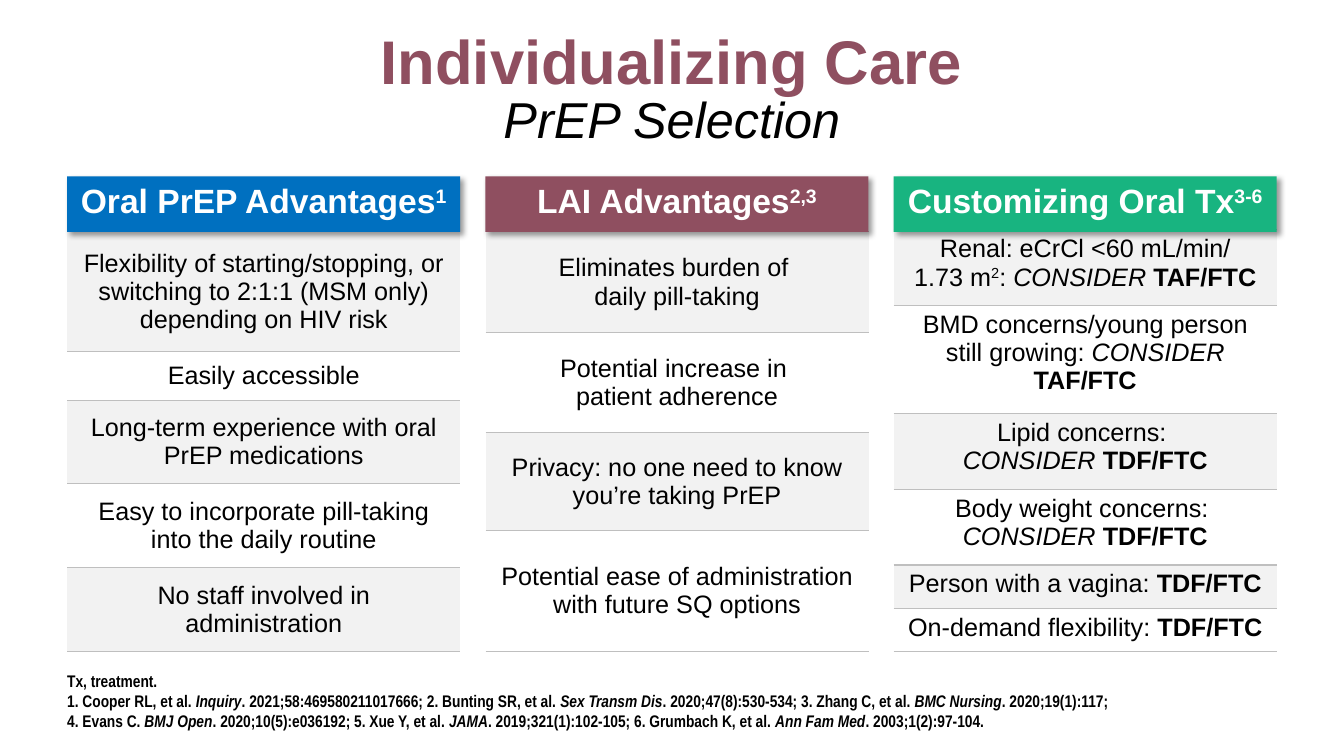
from lxml.etree import SubElement
from pptx import Presentation
from pptx.dml.color import RGBColor
from pptx.enum.shapes import MSO_SHAPE
from pptx.enum.text import MSO_ANCHOR, PP_ALIGN
from pptx.oxml import parse_xml
from pptx.oxml.ns import nsdecls, qn
from pptx.util import Pt

# Content: a paragraph is a list of (text, style); i = italic, b = bold, ^ = superscript
TITLE = [[("Individualizing Care\n", "b"), ("PrEP Selection", "i")]]
CONSIDER, TAF, TDF = ("CONSIDER ", "i"), ("TAF/FTC", "b"), ("TDF/FTC", "b")

COLUMNS = [
    {"heading": "Oral PrEP Advantages", "refs": "1", "color": "0070C0",
     "width": 280.8, "anchor": MSO_ANCHOR.MIDDLE, "rows": [
         (85.7, [("Flexibility of starting/stopping, or switching to 2:1:1 "
                  "(MSM only) depending on HIV risk", "")]),
         (34.5, [("Easily accessible", "")]),
         (59.8, [("Long-term experience with oral PrEP medications", "")]),
         (59.8, [("Easy to incorporate pill-taking into the daily routine", "")]),
         (59.8, [("No staff involved in administration", "")]),
     ]},
    {"heading": "LAI Advantages", "refs": "2,3", "color": "8F4F60",
     "width": 273.6, "anchor": MSO_ANCHOR.MIDDLE, "rows": [
         (72, [("Eliminates burden of \ndaily pill-taking", "")]),
         (71.4, [("Potential increase in \npatient adherence", "")]),
         (70.2, [("Privacy: no one need to know you’re taking PrEP", "")]),
         (86, [("Potential ease of administration with future SQ options", "")]),
     ]},
    {"heading": "Customizing Oral Tx", "refs": "3-6", "color": "18B480",
     "width": 273.6, "anchor": MSO_ANCHOR.TOP, "rows": [
         (54, [("Renal: eCrCl <60 mL/min/\n1.73 m", ""), ("2", "^"), (": ", ""),
               CONSIDER, TAF]),
         (77.4, [("BMD concerns/young person still growing: ", ""), CONSIDER, TAF]),
         (54, [("Lipid concerns: \n", ""), CONSIDER, TDF]),
         (54, [("Body weight concerns: \n", ""), CONSIDER, TDF]),
         (30.8, [("Person with a vagina: ", ""), TDF]),
         (30.8, [("On-demand flexibility: ", ""), TDF]),
     ]},
]

FOOTNOTES = [
    [("Tx, treatment.", "b")],
    [("1. Cooper RL, et al. ", "b"), ("Inquiry", "bi"),
     (". 2021;58:469580211017666; 2. Bunting SR, et al. ", "b"),
     ("Sex Transm Dis", "bi"),
     (". 2020;47(8):530-534; 3. Zhang C, et al. ", "b"), ("BMC Nursing", "bi"),
     (". 2020;19(1):117; \n4. Evans C. ", "b"), ("BMJ Open", "bi"),
     (". 2020;10(5):e036192; 5. Xue Y, et al. ", "b"), ("JAMA", "bi"),
     (". 2019;321(1):102-105; 6. Grumbach K, et al. ", "b"),
     ("Ann Fam Med", "bi"), (". 2003;1(2):97-104.", "b")],
]

# Layout
LEFT, FULL_WIDTH, GAP = 48, 864, 18
HEADING_TOP, HEADING_HEIGHT = 126, 39.6
TABLE_BOTTOM = 465.2
BAND, RULE = "F2F2F2", "BFBFBF"


def rgb(color):
    return RGBColor.from_string(color)


def write(frame, paragraphs, size=18, font="Arial", color="000000",
          align=PP_ALIGN.CENTER, spacing=None):
    """Fill a text frame; size and color may be dicts keyed by style."""
    for number, runs in enumerate(paragraphs):
        paragraph = frame.paragraphs[0] if number == 0 else frame.add_paragraph()
        paragraph.alignment = align
        paragraph.space_before = Pt(0)
        if spacing:
            paragraph.line_spacing = spacing
        for text, style in runs:
            points = size[style] if isinstance(size, dict) else size
            tint = color[style] if isinstance(color, dict) else color
            for line_number, line in enumerate(text.split("\n")):
                if line_number:
                    paragraph.add_line_break()
                    line_break = paragraph._p.findall(qn("a:br"))[-1]
                    SubElement(line_break, qn("a:rPr"), sz=str(points * 100))
                if not line:
                    continue
                run = paragraph.add_run()
                run.text = line
                run.font.size, run.font.name = Pt(points), font
                run.font.bold, run.font.italic = "b" in style, "i" in style
                run.font.color.rgb = rgb(tint)
                if "^" in style:
                    run._r.get_or_add_rPr().set("baseline", "30000")


def set_insets(frame, horizontal, vertical):
    frame.word_wrap = True
    frame.margin_left = frame.margin_right = Pt(horizontal)
    frame.margin_top = frame.margin_bottom = Pt(vertical)


def rule_cell(cell):
    """Grey rules above and below, none at the sides."""
    grey = f'<a:solidFill><a:srgbClr val="{RULE}"/></a:solidFill>'
    edges = [("lnL", "<a:noFill/>"), ("lnR", "<a:noFill/>"),
             ("lnT", grey), ("lnB", grey)]
    properties = cell._tc.get_or_add_tcPr()
    for position, (edge, paint) in enumerate(edges):
        properties.insert(position, parse_xml(
            f'<a:{edge} {nsdecls("a")} w="12700">{paint}</a:{edge}>'))


def add_advantages(slide, column, left):
    heights = [height for height, _ in column["rows"]]
    total = sum(heights)
    table = slide.shapes.add_table(
        len(heights), 1, Pt(left), Pt(TABLE_BOTTOM - total),
        Pt(column["width"]), Pt(total)).table
    table.first_row = table.horz_banding = False
    for number, (height, runs) in enumerate(column["rows"]):
        table.rows[number].height = Pt(height)
        cell = table.cell(number, 0)
        cell.vertical_anchor = column["anchor"]
        write(cell.text_frame, [runs])
        rule_cell(cell)
        if number % 2 == 0:
            cell.fill.solid()
            cell.fill.fore_color.rgb = rgb(BAND)
        else:
            cell.fill.background()


def add_heading(slide, column, left):
    heading = slide.shapes.add_shape(
        MSO_SHAPE.RECTANGLE, Pt(left), Pt(HEADING_TOP),
        Pt(column["width"]), Pt(HEADING_HEIGHT))
    heading.fill.solid()
    heading.fill.fore_color.rgb = rgb(column["color"])
    heading.line.fill.background()
    heading.shadow.inherit = False
    effects = heading._element.spPr.find(qn("a:effectLst"))
    effects.append(parse_xml(
        f'<a:outerShdw {nsdecls("a")} blurRad="{Pt(4)}" dist="{Pt(3)}" '
        'dir="2700000" algn="tl" rotWithShape="0"><a:srgbClr val="000000">'
        '<a:alpha val="40000"/></a:srgbClr></a:outerShdw>'))
    set_insets(heading.text_frame, 7.2, 7.2)
    heading.text_frame.vertical_anchor = MSO_ANCHOR.TOP
    write(heading.text_frame, [[(column["heading"], "b"), (column["refs"], "b^")]],
          size=24, color="FFFFFF", spacing=0.85)


def main():
    deck = Presentation()
    deck.slide_width, deck.slide_height = Pt(960), Pt(540)
    slide = deck.slides.add_slide(deck.slide_layouts[5])

    # Title
    title = slide.shapes.title
    title.left, title.top = Pt(LEFT), Pt(21)
    title.width, title.height = Pt(FULL_WIDTH), Pt(90)
    set_insets(title.text_frame, 0, 3.6)
    title.text_frame.vertical_anchor = MSO_ANCHOR.TOP
    write(title.text_frame, TITLE, size={"b": 44, "i": 36},
          color={"b": "8F4F60", "i": "000000"}, spacing=0.85)

    # Footnotes
    footnotes = slide.shapes.add_textbox(Pt(LEFT), Pt(478), Pt(FULL_WIDTH), Pt(44))
    set_insets(footnotes.text_frame, 0, 0)
    footnotes.text_frame.vertical_anchor = MSO_ANCHOR.BOTTOM
    write(footnotes.text_frame, FOOTNOTES, size=12, font="Arial Narrow",
          align=PP_ALIGN.LEFT)

    # Columns, each heading in front of its table
    left = LEFT
    for column in COLUMNS:
        add_advantages(slide, column, left)
        add_heading(slide, column, left)
        left += column["width"] + GAP

    deck.save("out.pptx")


if __name__ == "__main__":
    main()
